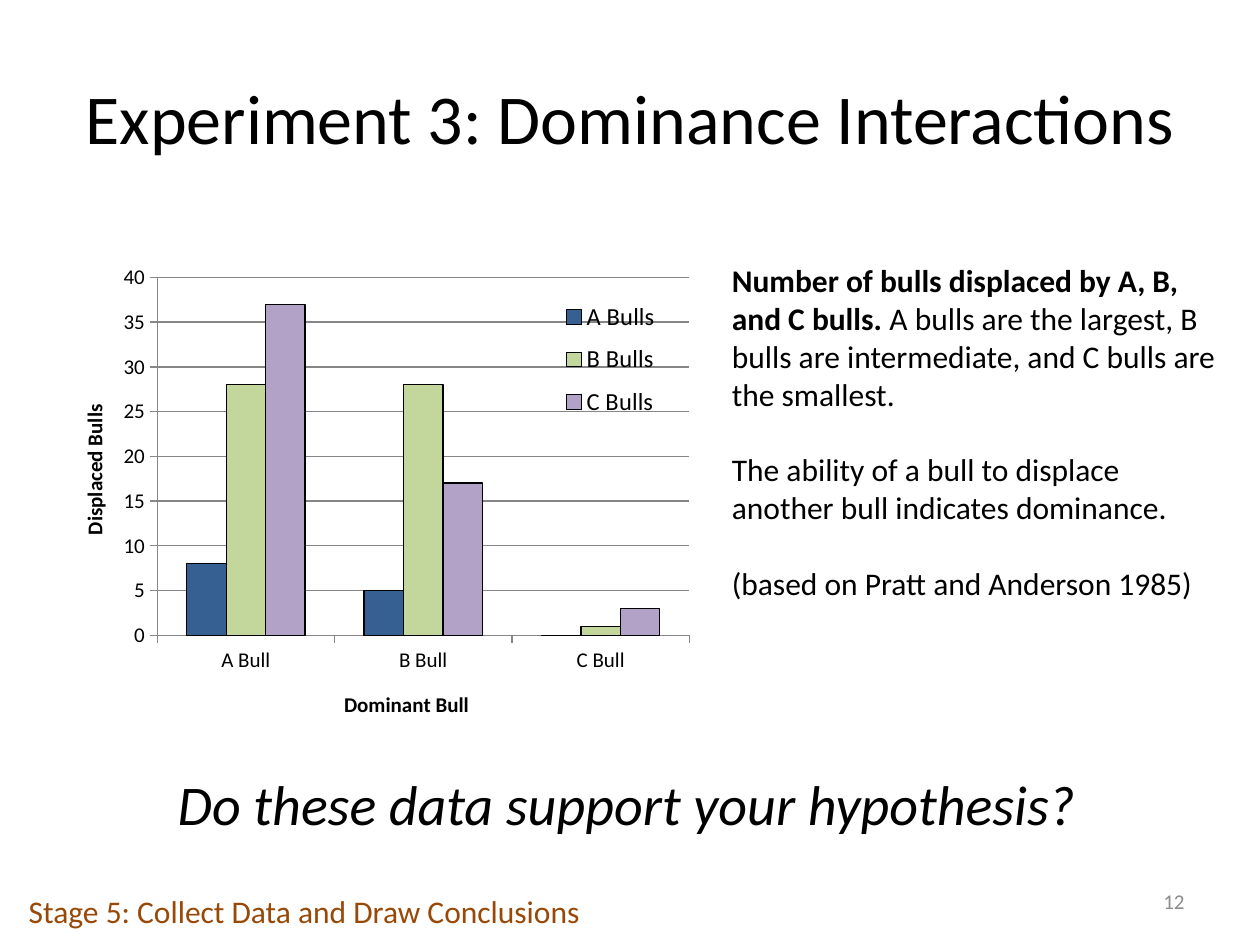
import pptx
import pptx.chart.data
import pptx.dml.color
import pptx.enum.chart
import pptx.enum.text
import pptx.oxml
import pptx.oxml.ns
import pptx.util

# Content
TITLE = "Experiment 3: Dominance Interactions"
QUESTION = "Do these data support your hypothesis?"
STAGE = "Stage 5: Collect Data and Draw Conclusions"
PAGE = "12"
NOTES = [
    [("Number of bulls displaced by A, B, and C bulls.", True),
     (" A bulls are the largest, B bulls are intermediate, and C bulls are the smallest.", False)],
    [("The ability of a bull to displace another bull indicates dominance.", False)],
    [("(based on Pratt and Anderson 1985)", False)],
]
DOMINANT_BULLS = ["A Bull", "B Bull", "C Bull"]
DISPLACED = {"A Bulls": (8, 5, 0), "B Bulls": (28, 28, 1), "C Bulls": (37, 17, 3)}

THEME = {
    "font": "Calibri", "ink": "000000", "stage": "984807", "page": "8C8C8C",
    "grid": "868686", "bars": ["376092", "C3D69B", "B3A2C7"],
    "title_size": 40, "question_size": 32, "body_size": 18, "legend_size": 14, "small_size": 12,
}

# Places as shares of the slide: left, top, width, height
WIDTH, HEIGHT = 10, 7.5
BODY_TOP = 0.27
PLACES = {
    "title": (0.05, 0.04, 0.9, 0.167),
    "chart": (0.04, BODY_TOP, 0.517, 0.513),
    "notes": (0.571, BODY_TOP, 0.411, 0.499),
    "question": (0.013, 0.808, 0.969, 0.085),
    "stage": (0.013, 0.937, 0.62, 0.095),
    "page": (0.717, 0.927, 0.233, 0.053),
}

ALIGN = pptx.enum.text.PP_ALIGN
ANCHOR = pptx.enum.text.MSO_ANCHOR


def place(part):
    return [pptx.util.Inches(share * side)
            for share, side in zip(PLACES[part], (WIDTH, HEIGHT, WIDTH, HEIGHT))]


def color(name):
    return pptx.dml.color.RGBColor.from_string(name)


def style(font, size, ink=THEME["ink"], bold=False, italic=False):
    font.name, font.size = THEME["font"], pptx.util.Pt(size)
    font.bold, font.italic = bold, italic
    font.color.rgb = color(ink)


def add_text(slide, part, paragraphs, size, ink=THEME["ink"], align=ALIGN.LEFT,
             anchor=ANCHOR.TOP, italic=False, gap=0):
    frame = slide.shapes.add_textbox(*place(part)).text_frame
    frame.word_wrap, frame.vertical_anchor = True, anchor
    for index, runs in enumerate(paragraphs):
        paragraph = frame.add_paragraph() if index else frame.paragraphs[0]
        paragraph.alignment = align
        paragraph.space_before = pptx.util.Pt(gap if index else 0)
        for words, bold in runs:
            run = paragraph.add_run()
            run.text = words
            style(run.font, size, ink, bold, italic)


def set_layout(element, inner=False, **shares):
    """Fix a chart part at shares of the chart area."""
    tag = pptx.oxml.ns.qn
    for old in element.findall(tag("c:layout")):
        element.remove(old)
    settings = [("layoutTarget", "inner")] if inner else []
    settings += [(f"{key}Mode", "edge") for key in ("x", "y")] + list(shares.items())
    body = "".join(f'<c:{key} val="{value}"/>' for key, value in settings)
    layout = pptx.oxml.parse_xml(
        f'<c:layout {pptx.oxml.ns.nsdecls("c")}><c:manualLayout>{body}</c:manualLayout></c:layout>')
    overlay = element.find(tag("c:overlay"))
    if overlay is None:
        element.insert(0, layout)
    else:
        overlay.addprevious(layout)


def add_bull_chart(slide):
    data = pptx.chart.data.CategoryChartData()
    data.categories = DOMINANT_BULLS
    for name, counts in DISPLACED.items():
        data.add_series(name, counts)
    chart = slide.shapes.add_chart(
        pptx.enum.chart.XL_CHART_TYPE.COLUMN_CLUSTERED, *place("chart"), data).chart
    style(chart.font, THEME["small_size"])
    chart.has_title = False

    # Bars
    plot = chart.plots[0]
    plot.gap_width, plot.overlap, plot.vary_by_categories = 150, 0, False
    for series, fill in zip(plot.series, THEME["bars"]):
        series.format.fill.solid()
        series.format.fill.fore_color.rgb = color(fill)
        series.format.line.color.rgb = color(THEME["ink"])
        series.format.line.width = pptx.util.Pt(0.75)

    # Axes
    counts_axis = chart.value_axis
    counts_axis.minimum_scale, counts_axis.maximum_scale, counts_axis.major_unit = 0, 40, 5
    counts_axis.has_major_gridlines = True
    for axis, words, x, y in ((chart.category_axis, "Dominant Bull ", 0.445, 0.89),
                              (counts_axis, "Displaced Bulls", 0.04, 0.3)):
        axis.major_tick_mark = pptx.enum.chart.XL_TICK_MARK.OUTSIDE
        axis.format.line.color.rgb = color(THEME["grid"])
        style(axis.tick_labels.font, THEME["small_size"])
        axis.axis_title.text_frame.text = words
        style(axis.axis_title.text_frame.paragraphs[0].runs[0].font, THEME["small_size"], bold=True)
        set_layout(axis.axis_title._element, x=x, y=y)
    counts_axis.major_gridlines.format.line.color.rgb = color(THEME["grid"])

    # Legend over the plot
    chart.has_legend = True
    chart.legend.position = pptx.enum.chart.XL_LEGEND_POSITION.RIGHT
    chart.legend.include_in_layout = True
    style(chart.legend.font, THEME["legend_size"])
    set_layout(chart.legend._element, x=0.76, y=0.07, w=0.2, h=0.29)
    set_layout(chart._chartSpace.chart.plotArea, inner=True, x=0.164, y=0.046, w=0.817, h=0.738)


def main():
    deck = pptx.Presentation()
    deck.slide_width, deck.slide_height = pptx.util.Inches(WIDTH), pptx.util.Inches(HEIGHT)
    slide = deck.slides.add_slide(deck.slide_layouts[6])

    add_text(slide, "question", [[(QUESTION, False)]], THEME["question_size"],
             align=ALIGN.CENTER, italic=True)
    add_bull_chart(slide)
    add_text(slide, "stage", [[(STAGE, False)]], THEME["body_size"], THEME["stage"])
    add_text(slide, "notes", NOTES, THEME["body_size"], gap=21.6)
    add_text(slide, "page", [[(PAGE, False)]], THEME["small_size"], THEME["page"],
             ALIGN.RIGHT, ANCHOR.MIDDLE)
    add_text(slide, "title", [[(TITLE, False)]], THEME["title_size"],
             align=ALIGN.CENTER, anchor=ANCHOR.MIDDLE)
    deck.save("out.pptx")


if __name__ == "__main__":
    main()
